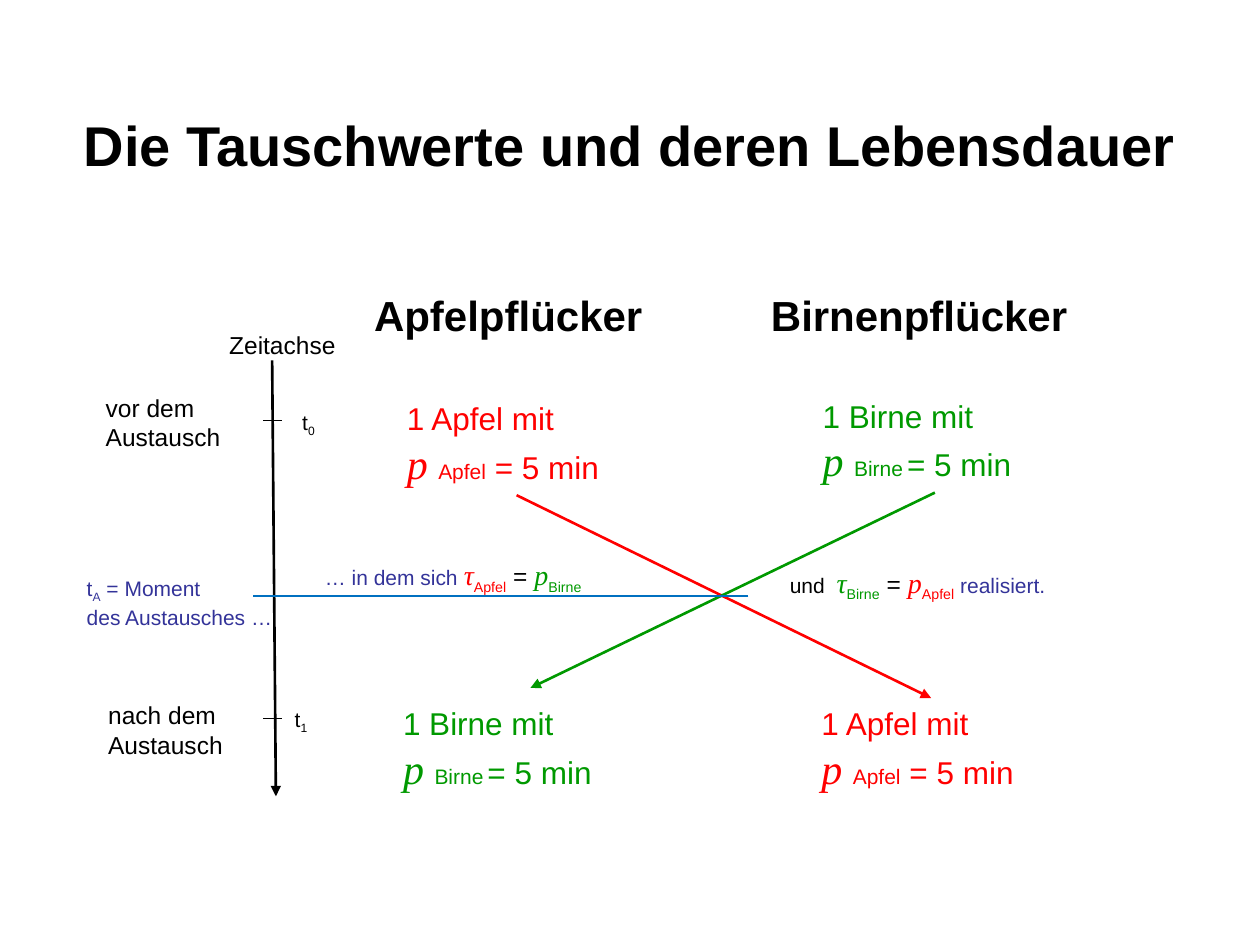
from lxml.etree import SubElement
from pptx import Presentation
from pptx.dml.color import RGBColor
from pptx.enum.shapes import MSO_CONNECTOR
from pptx.enum.text import MSO_ANCHOR, MSO_AUTO_SIZE, PP_ALIGN
from pptx.oxml.ns import qn
from pptx.util import Inches, Pt

SANS, SERIF = "Arial", "Times New Roman"
THEME = {
    "colors": {"black": "000000", "apple": "FF0000", "pear": "009900",
               "moment": "333399", "exchange": "0070C0"},
    "styles": {
        "title": {"name": SANS, "size": Pt(32), "bold": True},
        "heading": {"name": SANS, "size": Pt(24), "bold": True},
        "good": {"name": SANS, "size": Pt(18)},
        "label": {"name": SANS, "size": Pt(14)},
        "note": {"name": SANS, "size": Pt(12)},
        "price": {"name": SERIF, "size": Pt(24), "italic": True},
        "symbol": {"name": SERIF, "size": Pt(16), "italic": True},
        "index": {"name": SANS, "size": Pt(14)},
        "small index": {"name": SANS, "size": Pt(12)},
    },
}

presentation = Presentation()
presentation.slide_width, presentation.slide_height = Inches(10), Inches(7.5)
slide = presentation.slides.add_slide(presentation.slide_layouts[5])


def add_text(left, top, width, height, lines, wrap=False):
    """Add a text box; each line is a list of (text, style, color) runs."""
    box = slide.shapes.add_textbox(Inches(left), Inches(top), Inches(width), Inches(height))
    frame = box.text_frame
    frame.word_wrap = wrap
    frame.auto_size = MSO_AUTO_SIZE.SHAPE_TO_FIT_TEXT
    for number, line in enumerate(lines):
        paragraph = frame.add_paragraph() if number else frame.paragraphs[0]
        for text, style, color in line:
            run = paragraph.add_run()
            run.text = text
            for attribute, value in THEME["styles"][style].items():
                setattr(run.font, attribute, value)
            run.font.color.rgb = RGBColor.from_string(THEME["colors"][color])
            if style.endswith("index"):
                run._r.get_or_add_rPr().set("baseline", "-25000")


def add_line(start, end, color, width=0.75, arrow=False):
    points = [Inches(value) for value in (*start, *end)]
    line = slide.shapes.add_connector(MSO_CONNECTOR.STRAIGHT, *points)
    line.line.color.rgb = RGBColor.from_string(THEME["colors"][color])
    line.line.width = Pt(width)
    if arrow:
        SubElement(line.line._get_or_add_ln(), qn("a:tailEnd"), type="triangle")
    SubElement(line._element.spPr, qn("a:effectLst"))


# Title
title = slide.shapes.title
title.left, title.top, title.width, title.height = map(Inches, (0.5, 0.52, 9, 1.25))
title.text_frame.text = "Die Tauschwerte und deren Lebensdauer"
title.text_frame.vertical_anchor = MSO_ANCHOR.MIDDLE
title_paragraph = title.text_frame.paragraphs[0]
title_paragraph.alignment = PP_ALIGN.CENTER
title_font = title_paragraph.runs[0].font
for attribute, value in THEME["styles"]["title"].items():
    setattr(title_font, attribute, value)
title_font.color.rgb = RGBColor.from_string(THEME["colors"]["black"])

# Pickers
for left, width, picker in ((2.87, 2.35, "Apfelpflücker"), (6.02, 2.58, "Birnenpflücker")):
    add_text(left, 2.25, width, 0.5, [[(picker, "heading", "black")]])

# Goods before and after the exchange
for left, top, fruit, color, gap in (
    (3.13, 3.12, "Apfel", "apple", "good"),
    (6.43, 3.10, "Birne", "pear", "index"),
    (3.10, 5.54, "Birne", "pear", "index"),
    (6.42, 5.54, "Apfel", "apple", "good"),
):
    add_text(left, top, 1.98, 0.81, [
        [(f"1 {fruit} mit", "good", color)],
        [("p ", "price", color), (fruit, "note", color), (" ", gap, color),
         ("= 5 min", "good", color)],
    ], wrap=True)

# Time axis
add_text(1.72, 2.57, 1.05, 0.34, [[("Zeitachse", "label", "black")]])
add_line((2.16, 2.86), (2.19, 6.32), "black", 1.5, arrow=True)
for tick, index, index_left, phase, phase_left, phase_top in (
    (3.34, "0", 2.30, "vor dem", 0.74, 3.07),
    (5.70, "1", 2.24, "nach dem", 0.76, 5.51),
):
    add_line((2.09, tick), (2.24, tick), "black")
    add_text(index_left, tick - 0.14, 0.31, 0.3,
             [[("t", "note", "black"), (index, "small index", "black")]])
    add_text(phase_left, phase_top, 1.12, 0.57,
             [[(text, "label", "black")] for text in (phase, "Austausch")])

# Exchange
add_line((4.1, 3.93), (7.39, 5.54), "apple", 1.5, arrow=True)
add_line((7.42, 3.91), (4.21, 5.46), "pear", 1.5, arrow=True)
add_line((5.94, 4.73), (2.01, 4.73), "exchange")
add_text(0.59, 4.52, 1.73, 0.5, [
    [("t", "note", "moment"), ("A", "small index", "moment"), (" = Moment", "note", "moment")],
    [("des Austausches …", "note", "moment")],
])

# Realised exchange values
apple, pear = ("Apfel", "apple"), ("Birne", "pear")
for left, top, width, opening, (own, own_color), (other, other_color), closing in (
    (2.48, 4.38, 2.35, ("… in dem sich ", "note", "moment"), apple, pear, []),
    (6.17, 4.44, 2.33, ("und  ", "note", "black"), pear, apple,
     [(" realisiert.", "note", "moment")]),
):
    add_text(left, top, width, 0.37, [[
        opening,
        ("τ", "symbol", own_color), (own, "index", own_color),
        (" = ", "label", "black"),
        ("p", "symbol", other_color), (other, "index", other_color),
        *closing,
    ]])

presentation.save("out.pptx")
